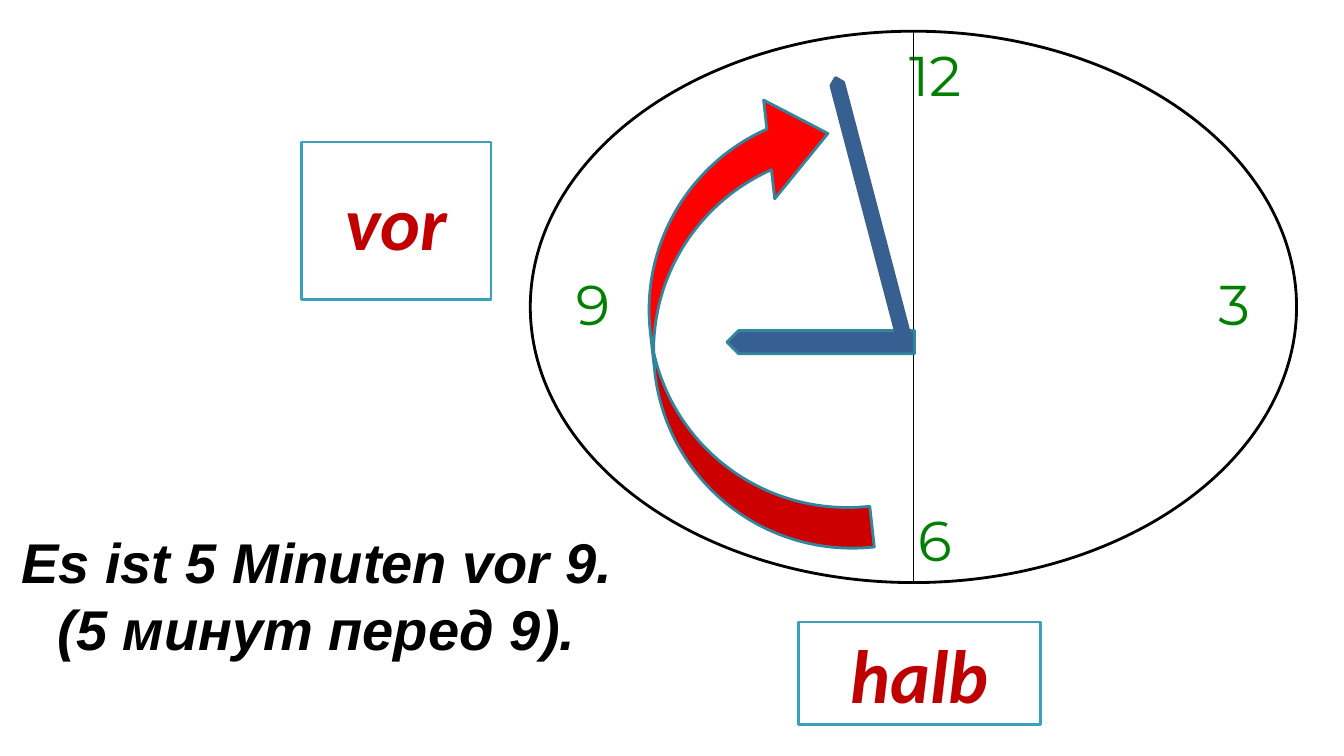
from lxml import etree
from pptx import Presentation
from pptx.dml.color import RGBColor
from pptx.enum.shapes import MSO_CONNECTOR, MSO_SHAPE
from pptx.enum.text import MSO_ANCHOR, PP_ALIGN
from pptx.oxml.ns import qn
from pptx.util import Pt

PX = 9144  # EMU per px, 100 px to the inch
OVAL, RECT = MSO_SHAPE.OVAL, MSO_SHAPE.RECTANGLE
HAND, SWEEP = MSO_SHAPE.PENTAGON, MSO_SHAPE.CURVED_LEFT_ARROW
STRAIGHT = MSO_CONNECTOR.STRAIGHT
MIDDLE, CENTER = MSO_ANCHOR.MIDDLE, PP_ALIGN.CENTER

BLACK, GREEN, DARK_RED, RED = "000000", "008000", "C00000", "FF0000"
BLUE, HAND_EDGE, TEAL, FRAME = "376092", "3A5F8C", "31859C", "3BA0BB"


def color(hex_string):
    return RGBColor.from_string(hex_string)


def emu(*lengths):
    return [length * PX for length in lengths]


def write(frame, lines, font_name, size, hex_string, bold_italic=False):
    frame.word_wrap = True
    frame.vertical_anchor = MIDDLE
    frame.text = "\n".join(lines)
    for paragraph in frame.paragraphs:
        paragraph.alignment = CENTER
        font = paragraph.font
        font.name, font.size = font_name, Pt(size)
        font.bold = font.italic = bold_italic
        font.color.rgb = color(hex_string)


def add_outlined(slide, kind, box, edge, fill=None, rotation=0):
    shape = slide.shapes.add_shape(kind, *emu(*box))
    shape.shadow.inherit = False
    shape.rotation = rotation
    if fill:
        shape.fill.solid()
        shape.fill.fore_color.rgb = color(fill)
    else:
        shape.fill.background()
    shape.line.color.rgb = color(edge)
    shape.line.width = Pt(2)
    return shape


def add_text(slide, box, lines, *style):
    text_box = slide.shapes.add_textbox(*emu(*box))
    write(text_box.text_frame, lines, *style)


def add_clock_face(slide, left, top, width, height):
    add_outlined(slide, OVAL, (left, top, width, height), BLACK)

    # Hour numerals: offset within the face, and width
    numerals = (("12", 344, 8, 115), ("3", 646, 235, 104),
                ("6", 354, 469, 94), ("9", 10, 235, 104))
    for numeral, dx, dy, numeral_width in numerals:
        add_text(slide, (left + dx, top + dy, numeral_width, 70),
                 [numeral], "Montserrat", 40, GREEN)

    # Line that halves the face
    middle = left + width // 2
    divider = slide.shapes.add_connector(
        STRAIGHT, *emu(middle, top, middle, top + height))
    divider.line.color.rgb = color(BLACK)
    divider.line.width = Pt(0.75)
    etree.SubElement(divider._element.spPr, qn("a:effectLst"))


def add_sweep_arrow(slide, *box):
    arrow = add_outlined(slide, SWEEP, box, TEAL, RED, 173.6)
    for index, value in enumerate((0.206, 0.5, 0.303)):
        arrow.adjustments[index] = value


def add_hands(slide, left, top):
    # Hour hand points at 9, minute hand just before 12
    add_outlined(slide, HAND, (left, top + 127, 186, 23), TEAL, BLUE, 180)
    add_outlined(slide, HAND, (left + 7, top, 270, 13), HAND_EDGE, BLUE, 255.3)


def add_word_card(slide, word, *box):
    card = add_outlined(slide, RECT, box, FRAME)
    write(card.text_frame, [word], "Calibri", 54, DARK_RED, True)


def add_sentence(slide, *box):
    add_text(slide, box, ["Es ist 5 Minuten vor 9.", "(5 минут перед 9)."],
             "Arial", 40, BLACK, True)


def main():
    deck = Presentation()
    deck.slide_width, deck.slide_height = emu(1333, 750)
    slide = deck.slides.add_slide(deck.slide_layouts[6])
    add_clock_face(slide, 526, 31, 760, 547)
    add_word_card(slide, "halb", 792, 617, 240, 102)
    add_sweep_arrow(slide, 645, 93, 197, 462)
    add_sentence(slide, 0, 484, 628, 211)
    add_hands(slide, 721, 201)
    add_word_card(slide, "vor", 299, 141, 188, 156)
    deck.save("out.pptx")


if __name__ == "__main__":
    main()
